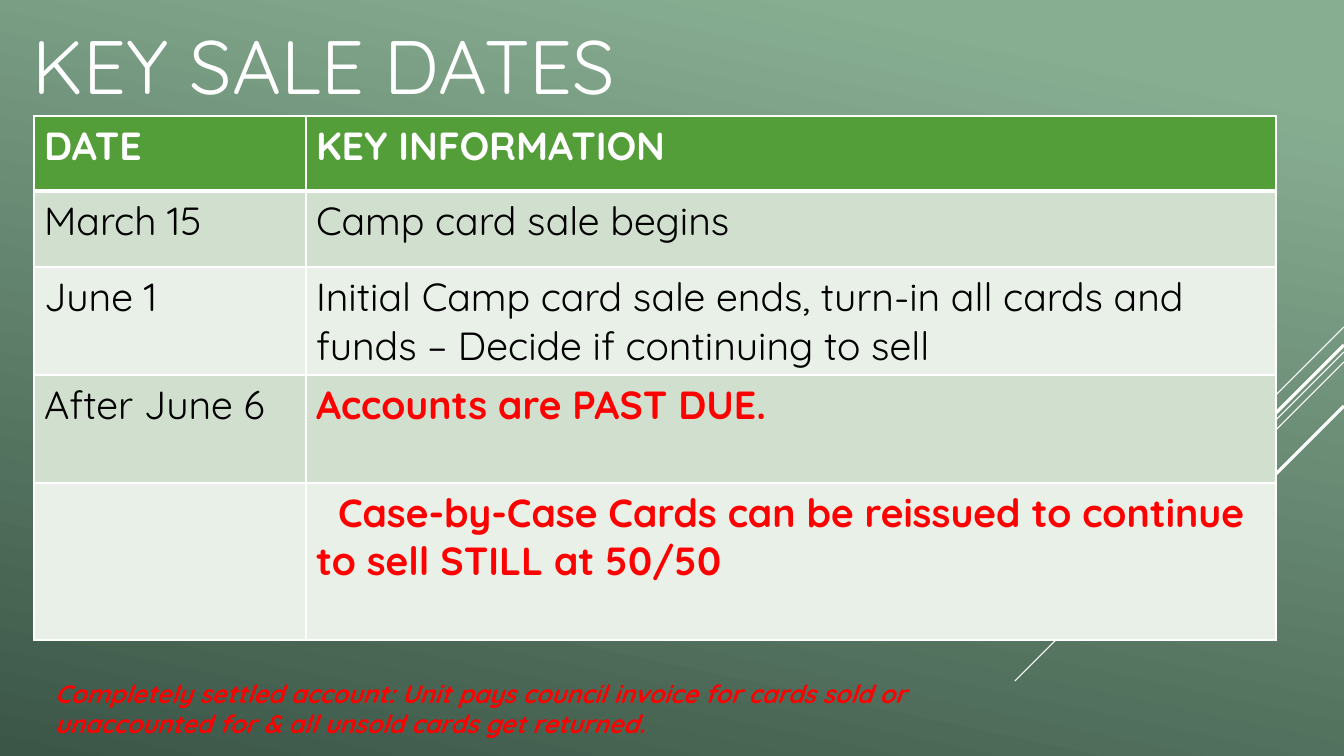
"""Build the slide of key sale dates."""
from dataclasses import dataclass

from lxml.etree import SubElement
from pptx import Presentation
from pptx.dml.color import RGBColor
from pptx.enum.shapes import MSO_CONNECTOR
from pptx.enum.text import MSO_ANCHOR
from pptx.oxml.ns import qn
from pptx.slide import Slide
from pptx.table import _Cell
from pptx.text.text import _Paragraph
from pptx.util import Emu, Pt


@dataclass(frozen=True)
class Theme:
    font: str = "Quicksand"
    white: str = "FFFFFF"
    black: str = "000000"
    red: str = "FF0000"
    header: str = "549E39"
    bands: tuple[str, str] = ("D1DFCE", "E9F0E8")
    backdrop: tuple[tuple[float, str], ...] = ((0.1, "88AE92"), (1.0, "3B5647"))
    title_size: int = 54
    table_size: int = 28
    note_size: int = 18
    rule: int = 1
    header_rule: int = 3


@dataclass(frozen=True)
class TextFormat:
    size: int
    color: str
    bold: bool = False
    italic: bool = False


@dataclass(frozen=True)
class Ray:
    top: int
    run: int
    weight: float


@dataclass(frozen=True)
class TextBlock:
    left: int
    top: int
    width: int
    height: int
    lines: tuple[str, ...]
    style: TextFormat
    anchor: MSO_ANCHOR = MSO_ANCHOR.TOP


@dataclass(frozen=True)
class SaleRow:
    height: int
    date: str
    info: str
    urgent: bool = False
    indent: int = 0


THEME = Theme()
PAGE_WIDTH, PAGE_HEIGHT = 1344, 756
TABLE_LEFT, TABLE_TOP = 34, 116
COLUMNS = (272, 970)
HEADING = TextFormat(THEME.table_size, THEME.white, bold=True)
BODY = TextFormat(THEME.table_size, THEME.black)
URGENT = TextFormat(THEME.table_size, THEME.red, bold=True)

RAYS = (
    Ray(327, 101, 0.75),
    Ray(352, 329, 0.75),
    Ray(362, 209, 0.75),
    Ray(345, 193, 2.25),
    Ray(406, 140, 2.25),
)
BLOCKS = (
    TextBlock(23, 13, 948, 102, ("KEY SALE DATES",),
              TextFormat(THEME.title_size, THEME.white), MSO_ANCHOR.MIDDLE),
    TextBlock(45, 673, 897, 72,
              ("Completely settled account: Unit pays council invoice for cards sold or",
               "unaccounted for & all unsold cards get returned."),
              TextFormat(THEME.note_size, THEME.red, bold=True, italic=True)),
)
ROWS = (
    SaleRow(75, "DATE", "KEY INFORMATION"),
    SaleRow(76, "March 15", "Camp card sale begins"),
    SaleRow(108, "June 1", "Initial Camp card sale ends, turn-in all cards and "
                           "funds – Decide if continuing to sell"),
    SaleRow(108, "After June 6", "Accounts are PAST DUE.", urgent=True),
    SaleRow(157, "", "Case-by-Case Cards can be reissued to continue "
                     "to sell STILL at 50/50", urgent=True, indent=22),
)


def px(length: int) -> Emu:
    """Turn pixels into EMU."""
    return Emu(round(length * 914400 / 100.8))


def write(para: _Paragraph, text: str, style: TextFormat) -> None:
    """Put formatted text in a paragraph."""
    span = para.add_run()
    span.text = text
    values = {"name": THEME.font, "size": Pt(style.size),
              "bold": style.bold, "italic": style.italic}
    for name, value in values.items():
        setattr(span.font, name, value)
    span.font.color.rgb = RGBColor.from_string(style.color)


def paint_background(page: Slide) -> None:
    """Fill the page with the green gradient."""
    fill = page.background.fill
    fill.gradient()
    fill.gradient_angle = 360 - 102
    for stop, (position, color) in zip(fill.gradient_stops, THEME.backdrop):
        stop.position = position
        stop.color.rgb = RGBColor.from_string(color)


def draw_ray(page: Slide, ray: Ray) -> None:
    """Draw a 45 degree line down from the right edge."""
    line = page.shapes.add_connector(
        MSO_CONNECTOR.STRAIGHT, px(PAGE_WIDTH), px(ray.top),
        px(PAGE_WIDTH - ray.run), px(ray.top + ray.run))
    line.line.color.rgb = RGBColor.from_string(THEME.white)
    line.line.width = Pt(ray.weight)
    SubElement(line._element.spPr, qn("a:effectLst"))


def draw_block(page: Slide, block: TextBlock) -> None:
    """Draw a text box with one paragraph a line."""
    box = page.shapes.add_textbox(
        px(block.left), px(block.top), px(block.width), px(block.height))
    frame = box.text_frame
    frame.word_wrap = True
    frame.vertical_anchor = block.anchor
    for index, text in enumerate(block.lines):
        para = frame.add_paragraph() if index else frame.paragraphs[0]
        write(para, text, block.style)


def dress_cell(cell: _Cell, color: str, top: int, bottom: int) -> None:
    """Give a cell its white borders and its fill."""
    properties = cell._tc.get_or_add_tcPr()
    weights = {"lnL": THEME.rule, "lnR": THEME.rule, "lnT": top, "lnB": bottom}
    for side, weight in weights.items():
        border = SubElement(properties, qn(f"a:{side}"), w=str(Pt(weight)))
        solid = SubElement(border, qn("a:solidFill"))
        SubElement(solid, qn("a:srgbClr"), val=THEME.white)
    cell.fill.solid()
    cell.fill.fore_color.rgb = RGBColor.from_string(color)


def draw_table(page: Slide) -> None:
    """Draw the table of dates."""
    table = page.shapes.add_table(
        len(ROWS), len(COLUMNS), px(TABLE_LEFT), px(TABLE_TOP),
        px(sum(COLUMNS)), px(sum(row.height for row in ROWS))).table
    for column, width in zip(table.columns, COLUMNS):
        column.width = px(width)
    for index, row in enumerate(ROWS):
        table.rows[index].height = px(row.height)
        color = THEME.bands[(index - 1) % 2] if index else THEME.header
        top = THEME.header_rule if index == 1 else THEME.rule
        bottom = THEME.rule if index else THEME.header_rule
        date_style = BODY if index else HEADING
        info_style = URGENT if row.urgent else date_style
        entries = ((row.date, date_style, 0), (row.info, info_style, row.indent))
        for position, (text, style, indent) in enumerate(entries):
            cell = table.cell(index, position)
            dress_cell(cell, color, top, bottom)
            para = cell.text_frame.paragraphs[0]
            if indent:
                para._p.get_or_add_pPr().set("indent", str(px(indent)))
            if text:
                write(para, text, style)


def main() -> None:
    """Build and save the deck."""
    deck = Presentation()
    deck.slide_width, deck.slide_height = px(PAGE_WIDTH), px(PAGE_HEIGHT)
    page = deck.slides.add_slide(deck.slide_layouts[6])
    paint_background(page)
    for ray in RAYS:
        draw_ray(page, ray)
    draw_table(page)
    for block in BLOCKS:
        draw_block(page, block)
    deck.save("out.pptx")


if __name__ == "__main__":
    main()
